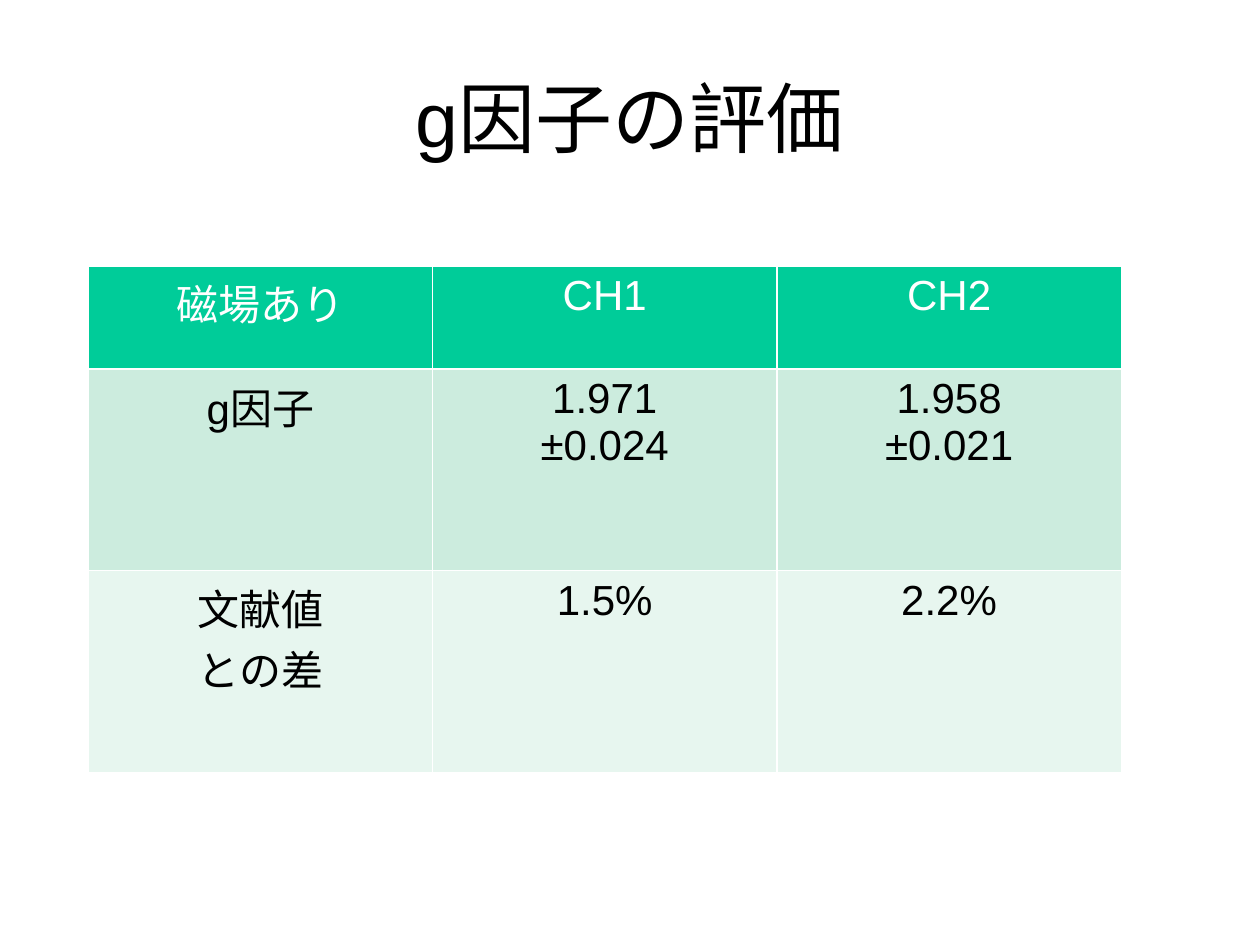
import pptx
import pptx.util
import pptx.dml.color
import pptx.enum.text

Inches = pptx.util.Inches
COLORS = {
    "black": "000000",
    "white": "FFFFFF",
    "header": "00CC99",
    "band_dark": "CCECDE",
    "band_light": "E7F6EF",
}


def rgb(name):
    return pptx.dml.color.RGBColor.from_string(COLORS[name])


def write_text(tf, text, size=24, color="black", font="Arial", bold=False):
    for i, line in enumerate(text.split("\n")):
        p = tf.paragraphs[0] if i == 0 else tf.add_paragraph()
        p.alignment = pptx.enum.text.PP_ALIGN.CENTER
        r = p.add_run()
        r.text = line
        r.font.name = font
        r.font.size = pptx.util.Pt(size)
        r.font.bold = bold
        r.font.color.rgb = rgb(color)


class SlideBuilder:
    def __init__(self, prs, font="Arial"):
        self.font = font
        self.s = prs.slides.add_slide(prs.slide_layouts[5])

    def title(self, text, left, top, width, height):
        sp = self.s.shapes.title
        sp.left, sp.top = Inches(left), Inches(top)
        sp.width, sp.height = Inches(width), Inches(height)
        tf = sp.text_frame
        tf.vertical_anchor = pptx.enum.text.MSO_ANCHOR.MIDDLE
        write_text(tf, text, size=44, font=self.font)

    def table(self, rows, heights, fills, left, top, width):
        table = self.s.shapes.add_table(
            len(rows), len(rows[0]), Inches(left), Inches(top),
            Inches(width), Inches(sum(heights))).table
        for i, (row, height, fill) in enumerate(zip(rows, heights, fills)):
            table.rows[i].height = Inches(height)
            color = "white" if i == 0 else "black"
            for j, text in enumerate(row):
                cell = table.cell(i, j)
                cell.fill.solid()
                cell.fill.fore_color.rgb = rgb(fill)
                write_text(cell.text_frame, text, color=color, font=self.font)


def main():
    prs = pptx.Presentation()
    prs.slide_width, prs.slide_height = Inches(10), Inches(7.5)
    slide = SlideBuilder(prs)
    slide.title("g因子の評価", 0.5, 0.14, 9, 1.57)
    slide.table(
        [
            ["磁場あり", "CH1", "CH2"],
            ["g因子", "1.971\n±0.024", "1.958\n±0.021"],
            ["文献値\nとの差", "1.5%", "2.2%"],
        ],
        heights=[0.82, 1.6, 1.6],
        fills=["header", "band_dark", "band_light"],
        left=0.7, top=2.11, width=8.2)
    prs.save("out.pptx")


if __name__ == "__main__":
    main()
